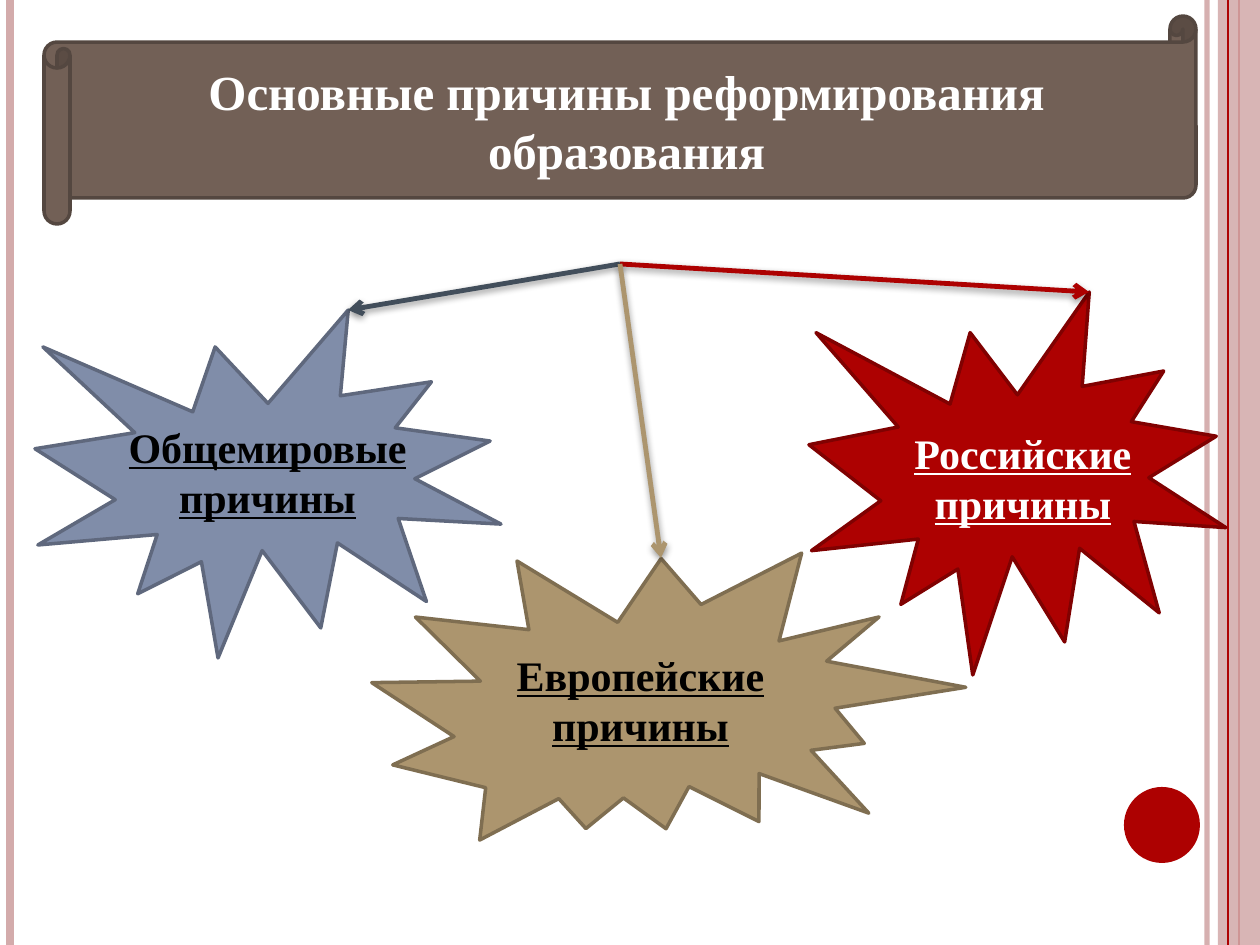
from lxml import etree
from pptx import Presentation
from pptx import util as u
from pptx.dml.color import RGBColor
from pptx.enum import shapes, text
from pptx.oxml import ns

PX = 914400 / 126
KIND = shapes.MSO_SHAPE


def px(*lengths):
    return [round(length * PX) for length in lengths]


def paint(color_format, color, opacity=100):
    color_format.solid()
    color_format.fore_color.rgb = RGBColor.from_string(color)
    if opacity < 100:
        for node in color_format._xPr.iter(ns.qn("a:srgbClr")):
            etree.SubElement(node, ns.qn("a:alpha"), val=str(opacity * 1000))


deck = Presentation()
deck.slide_width, deck.slide_height = px(1260, 945)
page = deck.slides.add_slide(deck.slide_layouts[6])

# Lines, back to front: start, end, colour, width in points, opacity, arrow
HUB = (620, 264)
edge_lines = [
    ((1207, 0), (1207, 945), "D3ABAB", 3, 93, False),
    ((10, 0), (10, 945), "D3ABAB", 4.5, 100, False),
    ((1239, 0), (1239, 945), "AD0101", 1.5, 100, False),
]
thin_line = [((1228, 0), (1228, 945), "AD0101", 0.75, 100, False)]
arrows = [
    (HUB, (348, 310), "424E5B", 2.75, 100, True),
    (HUB, (1089, 292), "AD0101", 2.75, 100, True),
    (HUB, (661, 558), "AC956E", 2.75, 100, True),
]

# Shapes: kind, box, rotation, fill, opacity, outline
side_band = [(KIND.RECTANGLE, (1218, 0, 42, 945), 0, "D3ABAB", 87, None)]
figures = [
    (KIND.OVAL, (1124, 787, 76, 76), 0, "AD0101", 100, None),
    (KIND.EXPLOSION1, (809, 292, 417, 383), 0, "AD0101", 100, "800101"),
    (KIND.EXPLOSION2, (373, 532, 586, 338), 9.9, "AC956E", 100, "7F6E51"),
    (KIND.EXPLOSION1, (35, 310, 466, 348), 0, "808DA9", 100, "5F687D"),
    (KIND.HORIZONTAL_SCROLL, (44, 16, 1152, 208), 0, "726056", 100, "544740"),
]

# Draw the layers in stacking order
for layer in (edge_lines, side_band, thin_line, figures, arrows):
    for item in layer:
        if layer in (side_band, figures):
            kind, place, turn, fill, opacity, outline = item
            shape = page.shapes.add_shape(kind, *px(*place))
            shape.shadow.inherit = False
            shape.rotation = turn
            paint(shape.fill, fill, opacity)
            if outline:
                paint(shape.line.fill, outline)
                shape.line.width = u.Pt(2)
            else:
                shape.line.fill.background()
            continue
        start, end, color, width, opacity, is_arrow = item
        line = page.shapes.add_connector(
            shapes.MSO_CONNECTOR.STRAIGHT, *px(*start, *end))
        paint(line.line.fill, color, opacity)
        line.line.width = u.Pt(width)
        properties = line._element.spPr
        effects = etree.SubElement(properties, ns.qn("a:effectLst"))
        if is_arrow:
            etree.SubElement(properties.find(ns.qn("a:ln")),
                             ns.qn("a:tailEnd"), type="arrow")
            shadow = etree.SubElement(
                effects, ns.qn("a:outerShdw"), blurRad=str(u.Pt(4)),
                dist=str(u.Pt(1.6)), dir="5400000", rotWithShape="0")
            black = etree.SubElement(shadow, ns.qn("a:srgbClr"), val="000000")
            etree.SubElement(black, ns.qn("a:alpha"), val="42000")
    if layer is figures:
        scroll = shape

# Title on the scroll and labels on the bursts
labels = [(scroll, "Основные причины реформирования образования", 28, "FFFFFF")]
for place, words, color in [
    ((89, 415, 357, 115), "Общемировые причины", "000000"),
    ((460, 643, 361, 115), "Европейские причины", "000000"),
    ((859, 421, 328, 115), "Российские причины", "FFFFFF"),
]:
    box = page.shapes.add_textbox(*px(*place))
    labels.append((box, words, 24, color))

for box, words, size, color in labels:
    frame = box.text_frame
    frame.word_wrap = True
    frame.text = words
    if box is scroll:
        frame.vertical_anchor = text.MSO_ANCHOR.MIDDLE
    else:
        frame.auto_size = text.MSO_AUTO_SIZE.SHAPE_TO_FIT_TEXT
    para = frame.paragraphs[0]
    para.alignment = text.PP_ALIGN.CENTER
    font = para.runs[0].font
    font.name = "Times New Roman"
    font.size = u.Pt(size)
    font.bold = True
    font.underline = box is not scroll
    paint(font.fill, color)

deck.save("out.pptx")
